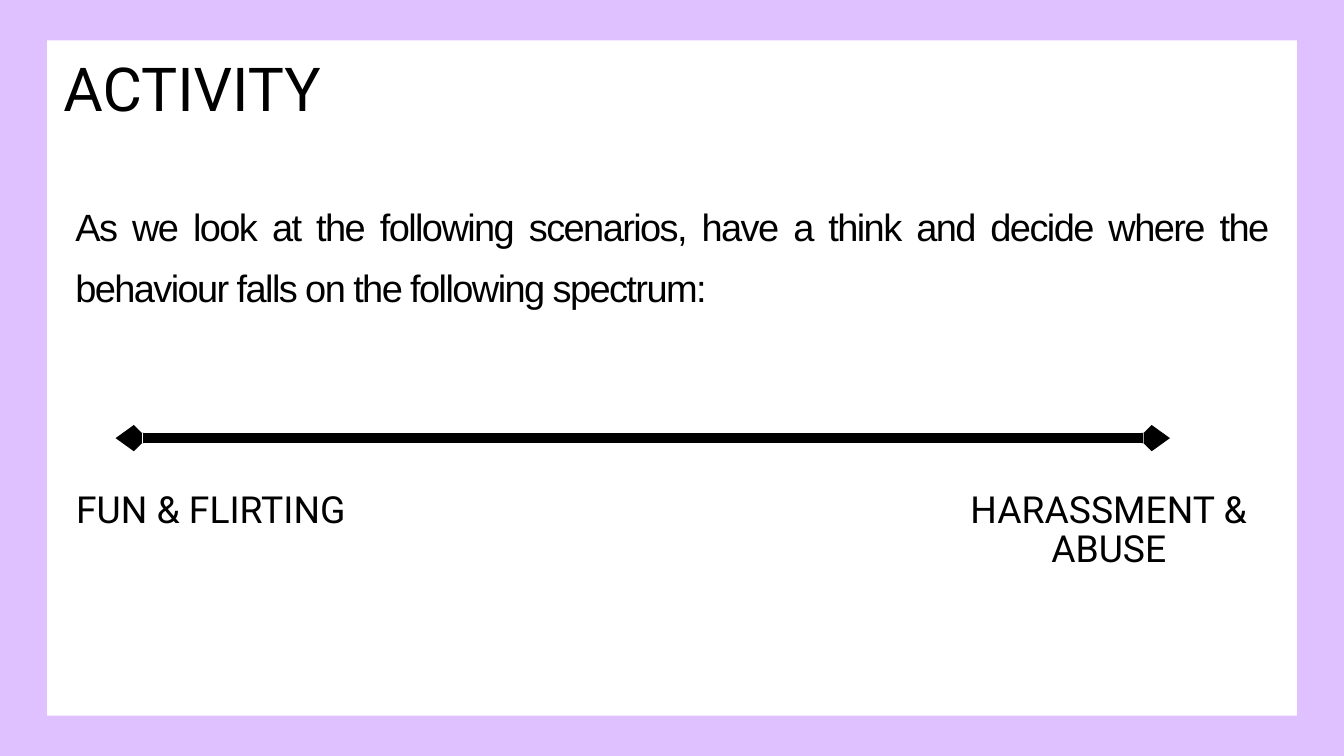
from lxml.etree import SubElement
from pptx import Presentation
from pptx.dml.color import RGBColor
from pptx.enum.shapes import MSO_CONNECTOR, MSO_SHAPE
from pptx.enum.text import PP_ALIGN
from pptx.oxml.ns import qn
from pptx.util import Pt

EMU_PER_PX = 9144
COLORS = {"border": "E0C1FF", "panel": "FFFFFF", "ink": "000000"}


def px(n):
    return n * EMU_PER_PX


def rgb(name):
    return RGBColor.from_string(COLORS[name])


class Deck:
    def __init__(self, width, height):
        self.prs = Presentation()
        self.prs.slide_width, self.prs.slide_height = px(width), px(height)
        self.s = None

    def slide(self, color):
        self.s = self.prs.slides.add_slide(self.prs.slide_layouts[6])
        fill = self.s.background.fill
        fill.solid()
        fill.fore_color.rgb = rgb(color)

    def panel(self, x, y, w, h, color):
        sp = self.s.shapes.add_shape(MSO_SHAPE.RECTANGLE, px(x), px(y), px(w), px(h))
        sp.shadow.inherit = False
        sp.fill.solid()
        sp.fill.fore_color.rgb = rgb(color)
        sp.line.fill.background()

    def text(self, x, y, w, h, text, size, leading, font="Roboto",
             align=PP_ALIGN.CENTER, spacing=0):
        tf = self.s.shapes.add_textbox(px(x), px(y), px(w), px(h)).text_frame
        tf.word_wrap = True
        tf.margin_left = tf.margin_top = tf.margin_right = tf.margin_bottom = 0
        p = tf.paragraphs[0]
        p.alignment = align
        p.line_spacing = Pt(leading)
        r = p.add_run()
        r.text = text
        r.font.size = Pt(size)
        r.font.name = font
        r.font.color.rgb = rgb("ink")
        if spacing:
            r._r.get_or_add_rPr().set("spc", str(round(spacing * 100)))

    def double_arrow(self, x1, x2, y, weight):
        c = self.s.shapes.add_connector(MSO_CONNECTOR.STRAIGHT, px(x1), px(y), px(x2), px(y))
        c.line.color.rgb = rgb("ink")
        c.line.width = Pt(weight)
        ln = c.line._get_or_add_ln()
        for end in ("a:headEnd", "a:tailEnd"):
            SubElement(ln, qn(end), type="arrow", w="sm", len="sm")
        SubElement(c._element.spPr, qn("a:effectLst"))


def main():
    deck = Deck(2000, 1125)
    deck.slide("border")
    deck.panel(70, 60, 1860, 1005, "panel")
    deck.text(112, 279, 1775, 175,
              "As we look at the following scenarios, have a think and decide "
              "where the behaviour falls on the following spectrum:",
              40.7, 65.9, "Arial", PP_ALIGN.JUSTIFY, -1.7)
    deck.text(-43, 90, 658, 100, "ACTIVITY", 64.9, 68.2)
    deck.double_arrow(172, 1741, 652, 11.25)
    for x, w, label in ((112, 404, "FUN & FLIRTING"), (1389, 522, "HARASSMENT & ABUSE")):
        deck.text(x, 732, w, 61, label, 39.9, 41.9)
    deck.prs.save("out.pptx")


if __name__ == "__main__":
    main()
